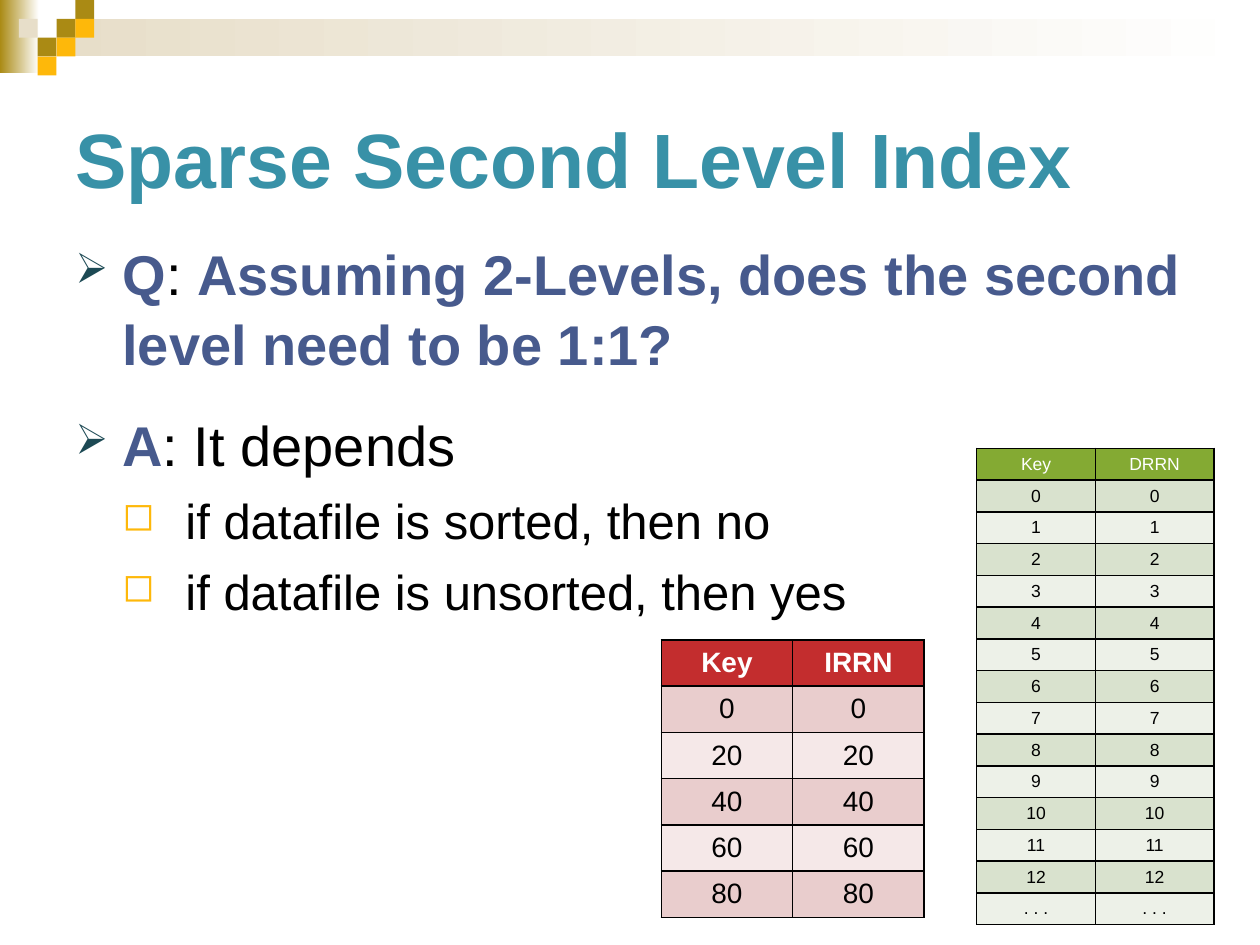
from lxml import etree
from pptx import Presentation
from pptx.dml.color import RGBColor as RGB
from pptx.enum.shapes import MSO_SHAPE as SHAPE
from pptx.enum.text import MSO_ANCHOR as ANCHOR, PP_ALIGN as ALIGN
from pptx.oxml.ns import qn
from pptx.util import Cm, Pt

C = {
    "olive": "AA8A14", "sand": "E7DEC9", "amber": "FEB80A", "white": "FFFFFF",
    "teal": "3891A7", "indigo": "475A8D", "black": "000000", "navy": "1C4954",
    "green": "84AA33", "green_mid": "D9E2CE", "green_pale": "EDF1E8",
    "red": "C32D2E", "red_mid": "E9CDCD", "red_pale": "F5E8E8",
}


def style(r, size, color, bold=False):
    r.font.name = "Arial"
    r.font.size = Pt(size)
    r.font.bold = bold
    r.font.color.rgb = RGB.from_string(C[color])


def add_index(left, top, col_w, row_h, rows, size, bold, inset, fills):
    """Two-column index table: header fill, then alternating body fills."""
    head, *bands = fills
    table = slide.shapes.add_table(len(rows), 2, Cm(left), Cm(top),
                                   Cm(2 * col_w), Cm(row_h * len(rows))).table
    for col in table.columns:
        col.width = Cm(col_w)
    for i, values in enumerate(rows):
        table.rows[i].height = Cm(row_h)
        for j, value in enumerate(values):
            cell = table.cell(i, j)
            cell.vertical_anchor = ANCHOR.MIDDLE
            if inset is not None:
                cell.margin_left = cell.margin_right = Cm(inset)
                cell.margin_top = cell.margin_bottom = Cm(inset)
            p = cell.text_frame.paragraphs[0]
            p.text = value
            p.alignment = ALIGN.CENTER
            style(p.runs[0], size, "black" if i else "white", bold and i == 0)
            # Borders come before the fill in the cell properties
            tc_pr = cell._tc.get_or_add_tcPr()
            for side in ("a:lnL", "a:lnR", "a:lnT", "a:lnB"):
                ln = etree.SubElement(tc_pr, qn(side), w=str(Pt(1)))
                solid = etree.SubElement(ln, qn("a:solidFill"))
                etree.SubElement(solid, qn("a:srgbClr"), val=C["black"])
            cell.fill.solid()
            fill = bands[(i - 1) % 2] if i else head
            cell.fill.fore_color.rgb = RGB.from_string(C[fill])


prs = Presentation()
prs.slide_width, prs.slide_height = Cm(25.4), Cm(19.05)
slide = prs.slides.add_slide(prs.slide_layouts[6])

# Header bands fading to white
for left, top, width, height, color in [(0, 0, 0.79, 1.47, "olive"),
                                        (1.14, 0.38, 24.26, 0.76, "sand")]:
    sp = slide.shapes.add_shape(SHAPE.RECTANGLE, Cm(left), Cm(top), Cm(width), Cm(height))
    sp.shadow.inherit = False
    sp.line.fill.background()
    sp.fill.gradient()
    sp.fill.gradient_angle = 0
    for stop, name, pos in zip(sp.fill.gradient_stops, (color, "white"), (0, 1)):
        stop.color.rgb = RGB.from_string(C[name])
        stop.position = pos

# Header squares on a grid of (column, row)
SQUARE = 0.38
for col, row, color in [(3, 1, "olive"), (4, 0, "olive"), (4, 1, "amber"), (2, 2, "olive"),
                        (1, 1, "sand"), (3, 2, "amber"), (2, 3, "amber")]:
    sp = slide.shapes.add_shape(SHAPE.RECTANGLE, Cm(col * SQUARE), Cm(row * SQUARE),
                                Cm(SQUARE), Cm(SQUARE))
    sp.shadow.inherit = False
    sp.line.fill.background()
    sp.fill.solid()
    sp.fill.fore_color.rgb = RGB.from_string(C[color])

# Title
tf = slide.shapes.add_textbox(Cm(1.27), Cm(1.27), Cm(22.86), Cm(3.81)).text_frame
tf.word_wrap = True
tf.vertical_anchor = ANCHOR.MIDDLE
tf.text = "Sparse Second Level Index"
style(tf.paragraphs[0].runs[0], 44, "teal", True)

# Question and answer: runs, size, space before, indent, hanging, bullet
tf = slide.shapes.add_textbox(Cm(1.27), Cm(4.65), Cm(22.86), Cm(12.27)).text_frame
tf.word_wrap = True
arrow = ("➢", "navy", 75)
box = ("◻", "amber", 80)
lines = [
    ([("Q", "indigo"), (": ", "black"),
      ("Assuming 2-Levels, does the second level need to be 1:1?", "indigo")],
     32, 6.4, 0.95, 0.95, arrow),
    ([("A", "indigo"), (": It depends", "black")], 32, 18, 0.95, 0.95, arrow),
    ([("if datafile is sorted, then no", "black")], 28, 5.6, 2.22, 1.27, box),
    ([("if datafile is unsorted, then yes", "black")], 28, 5.6, 2.22, 1.27, box),
]
for i, (runs, size, before, indent, hang, (char, color, scale)) in enumerate(lines):
    p = tf.add_paragraph() if i else tf.paragraphs[0]
    p.space_before = Pt(before)
    p.line_spacing = 1.04
    for text, ink in runs:
        r = p.add_run()
        r.text = text
        style(r, size, ink, ink == "indigo")
    p_pr = p._p.get_or_add_pPr()
    p_pr.set("marL", str(Cm(indent)))
    p_pr.set("indent", str(-Cm(hang)))
    bu_clr = etree.SubElement(p_pr, qn("a:buClr"))
    etree.SubElement(bu_clr, qn("a:srgbClr"), val=C[color])
    etree.SubElement(p_pr, qn("a:buSzPct"), val=str(scale * 1000))
    etree.SubElement(p_pr, qn("a:buChar"), char=char)

# Dense first-level index
dense = [("Key", "DRRN")] + [(str(n), str(n)) for n in range(13)] + [(". . .", ". . .")]
add_index(19.69, 9.04, 2.39, 0.64, dense, 10, False, 0,
          ("green", "green_mid", "green_pale"))

# Sparse second-level index
sparse = [("Key", "IRRN")] + [(str(n), str(n)) for n in range(0, 100, 20)]
add_index(13.33, 12.9, 2.65, 0.89, sparse, 16, True, None,
          ("red", "red_mid", "red_pale"))

prs.save("out.pptx")
